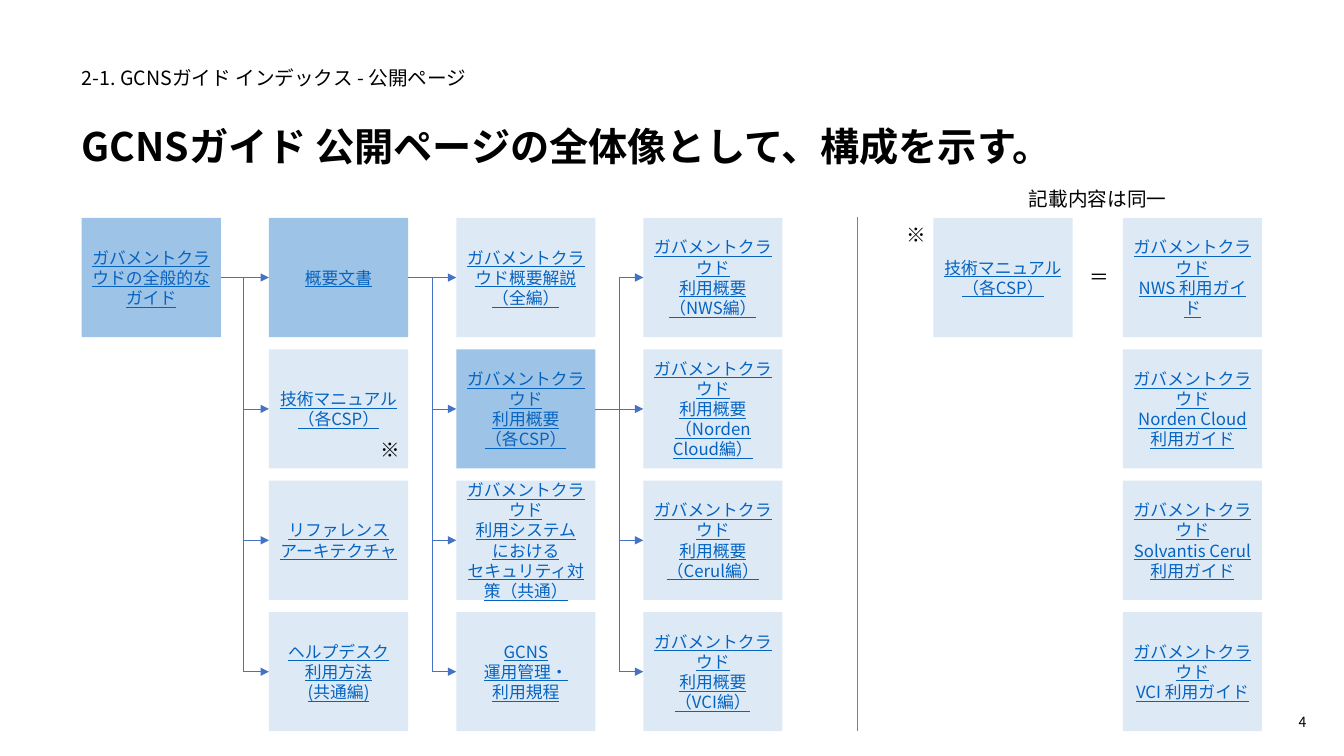
import pptx
import pptx.util
import pptx.dml.color
import pptx.enum.shapes
import pptx.enum.text
import pptx.oxml.ns
from lxml import etree

Pt = pptx.util.Pt
RGBColor = pptx.dml.color.RGBColor
ALIGN = pptx.enum.text.PP_ALIGN
ANCHOR = pptx.enum.text.MSO_ANCHOR
qn = pptx.oxml.ns.qn

FONT = "Noto Sans CJK JP"
BLACK = RGBColor(0x00, 0x00, 0x00)
LINK = RGBColor(0x05, 0x63, 0xC1)
MID_BLUE = RGBColor(0x9D, 0xC3, 0xE6)
PALE_BLUE = RGBColor(0xDD, 0xEA, 0xF6)
ARROW_BLUE = RGBColor(0x44, 0x72, 0xC4)
GRAY = RGBColor(0x80, 0x80, 0x80)

CLOUD = "ガバメントクラウド"
# Each column: left edge, then the boxes from top to bottom as lists of lines
COLUMNS = [
    (58.3, [["ガバメントクラウドの全般的なガイド"]]),
    (192.1, [["概要文書"],
             ["技術マニュアル（各CSP）"],
             ["リファレンス", "アーキテクチャ"],
             ["ヘルプデスク", "利用方法", "(共通編)"]]),
    (325.9, [["ガバメントクラウド概要解説", "（全編）"],
             [CLOUD, "利用概要", "（各CSP）"],
             [CLOUD, "利用システム", "における", "セキュリティ対策（共通）"],
             ["GCNS", "運用管理・", "利用規程"]]),
    (459.5, [[CLOUD, "利用概要", "（NWS編）"],
             [CLOUD, "利用概要", "（Norden Cloud編）"],
             [CLOUD, "利用概要", "（Cerul編）"],
             [CLOUD, "利用概要", "（VCI編）"]]),
    (666.7, [["技術マニュアル（各CSP）"]]),
    (802.1, [[CLOUD, "NWS 利用ガイド"],
             [CLOUD, "Norden Cloud", "利用ガイド"],
             [CLOUD, "Solvantis Cerul", "利用ガイド"],
             [CLOUD, "VCI 利用ガイド"]]),
]
PARENTS = {(0, 0), (1, 0), (2, 1)}  # (column, row) of the boxes that branch
TRUNK_X = {0: 173.5, 1: 308.9, 2: 442.1}

ROW_TOP, ROW_STEP = 155.7, 93.85
BOX_W, BOX_H = 99.4, 85.1

NOTE = {"inset": (7.2, 3.6, 7.2, 3.6), "size": 14}
FLUSH = {"inset": (0, 0, 0, 0)}
LABELS = [
    ("2-1. GCNSガイド インデックス - 公開ページ", (58.3, 43.2, 843.8, 24.5),
     {**FLUSH, "size": 14, "anchor": ANCHOR.MIDDLE}),
    ("GCNSガイド 公開ページの全体像として、構成を示す。", (58.3, 80.6, 843.1, 55.4),
     {**FLUSH, "size": 28, "bold": True, "line_spacing": 1.2}),
    ("※", (265, 309.6, 26.6, 24.5), NOTE),
    ("※", (640.1, 155.5, 26.6, 24.5), NOTE),
    ("＝", (771.1, 185.8, 26.6, 24.5), NOTE),
    ("記載内容は同一", (727.9, 130.3, 113.5, 41), NOTE),
    ("4", (897.8, 501.1, 35.3, 28.8),
     {"inset": (7.2, 3.6, 0, 3.6), "size": 10, "anchor": ANCHOR.MIDDLE, "align": ALIGN.RIGHT}),
]
BOX_TEXT = {"inset": (7.2, 3.6, 7.2, 3.6), "size": 12, "color": LINK, "underline": True,
            "anchor": ANCHOR.MIDDLE, "align": ALIGN.CENTER}


def write(sp, lines, fmt):
    tf = sp.text_frame
    frame = dict(zip(("margin_left", "margin_top", "margin_right", "margin_bottom"),
                     map(Pt, fmt["inset"])))
    frame.update(word_wrap=True, vertical_anchor=fmt.get("anchor", ANCHOR.TOP))
    for name, value in frame.items():
        setattr(tf, name, value)
    font = {"name": FONT, "size": Pt(fmt["size"]), "bold": fmt.get("bold", False),
            "underline": fmt.get("underline", False)}
    for i, line in enumerate(lines):
        p = tf.paragraphs[0] if i == 0 else tf.add_paragraph()
        p.alignment = fmt.get("align", ALIGN.LEFT)
        p.line_spacing = fmt.get("line_spacing", 1.0)
        r = p.add_run()
        r.text = line
        for name, value in font.items():
            setattr(r.font, name, value)
        r.font.color.rgb = fmt.get("color", BLACK)
        etree.SubElement(r.font._element, qn("a:ea"), typeface=FONT)


def add_box(s, col, row, lines):
    x = COLUMNS[col][0]
    sp = s.shapes.add_shape(pptx.enum.shapes.MSO_SHAPE.RECTANGLE, Pt(x),
                            Pt(ROW_TOP + row * ROW_STEP), Pt(BOX_W), Pt(BOX_H))
    sp.shadow.inherit = False
    sp.fill.solid()
    sp.fill.fore_color.rgb = MID_BLUE if (col, row) in PARENTS else PALE_BLUE
    sp.line.fill.background()
    write(sp, lines, BOX_TEXT)
    return sp


def add_line(s, x1, y1, x2, y2, color=ARROW_BLUE, start=None, end=None):
    """Draw a line; start and end are boxes to join, and an end box gets an arrowhead."""
    c = s.shapes.add_connector(pptx.enum.shapes.MSO_CONNECTOR.STRAIGHT,
                               Pt(x1), Pt(y1), Pt(x2), Pt(y2))
    c.line.color.rgb = color
    c.line.width = Pt(0.5)
    if start is not None:
        c.begin_connect(start, 3)
    if end is not None:
        c.end_connect(end, 1)
        etree.SubElement(c.line._get_or_add_ln(), qn("a:tailEnd"), type="triangle")
    etree.SubElement(c._element.spPr, qn("a:effectLst"))


def main():
    prs = pptx.Presentation()
    prs.slide_width, prs.slide_height = Pt(960), Pt(540)
    s = prs.slides.add_slide(prs.slide_layouts[6])

    boxes = {(col, row): add_box(s, col, row, lines)
             for col, (_, column) in enumerate(COLUMNS)
             for row, lines in enumerate(column)}

    middles = [ROW_TOP + BOX_H / 2 + row * ROW_STEP for row in range(4)]
    for col, parent_row in sorted(PARENTS):
        trunk = TRUNK_X[col]
        add_line(s, trunk, middles[0], trunk, middles[-1])
        for row, y in enumerate(middles):
            start = boxes[col, parent_row] if row == parent_row else None
            add_line(s, trunk, y, COLUMNS[col + 1][0], y,
                     start=start, end=boxes[col + 1, row])

    add_line(s, 612.7, 155, 612.7, 522, GRAY)

    for text, place, fmt in LABELS:
        write(s.shapes.add_textbox(*map(Pt, place)), [text], fmt)

    prs.save("out.pptx")


if __name__ == "__main__":
    main()
